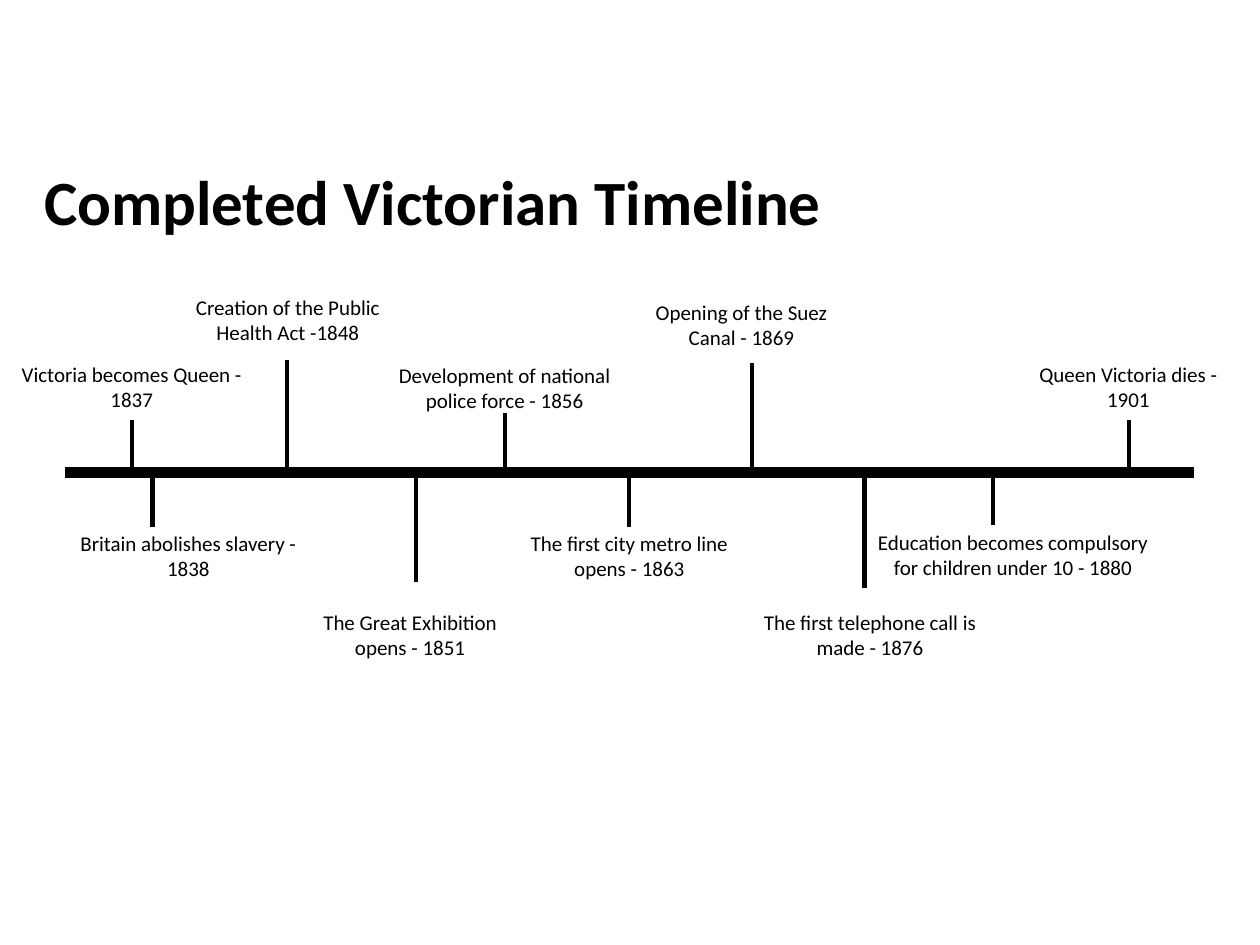
from pptx import Presentation
from pptx.dml.color import RGBColor
from pptx.enum.shapes import MSO_CONNECTOR as Connector
from pptx.enum.text import MSO_ANCHOR as Anchor, MSO_AUTO_SIZE as AutoSize, PP_ALIGN as Align
from pptx.oxml.ns import qn
from pptx.util import Pt
from lxml.etree import SubElement

SCALE = 9144
COLORS = {"ink": "000000", "paper": "FFFFFF"}
TITLE_FONT = {"name": "Calibri", "size": Pt(36), "bold": True}
LABEL_FONT = {"name": "Calibri", "size": Pt(12), "bold": False}
LABEL_WIDTH, LABEL_HEIGHT = 195, 50

# text, stem x, stem end, label left, label top, label width
EVENTS = [
    ("Victoria becomes Queen - 1837", 53, -42, -45, -93, LABEL_WIDTH),
    ("Britain abolishes slavery - 1838", 69, 43, 0, 41, LABEL_WIDTH),
    ("Creation of the Public Health Act -1848", 176, -89, 79, -146, LABEL_WIDTH),
    ("The Great Exhibition opens - 1851", 278, 87, 176, 104, LABEL_WIDTH),
    ("Development of national police force - 1856", 349, -47, 251, -92, LABEL_WIDTH),
    ("The first city metro line opens - 1863", 447, 43, 350, 41, LABEL_WIDTH),
    ("Opening of the Suez Canal - 1869", 545, -87, 439, -142, LABEL_WIDTH),
    ("The first telephone call is made - 1876", 634, 92, 541, 104, LABEL_WIDTH),
    ("Education becomes compulsory for children under 10 - 1880", 736, 42, 631, 40, 242),
    ("Queen Victoria dies - 1901", 844, -42, 746, -93, LABEL_WIDTH),
]


def px(*lengths):
    return [length * SCALE for length in lengths]


def color(name):
    return RGBColor.from_string(COLORS[name])


def write(box, text, font, align, anchor, auto_size):
    frame = box.text_frame
    settings = {"word_wrap": True, "vertical_anchor": anchor, "auto_size": auto_size}
    for name, value in settings.items():
        setattr(frame, name, value)
    para = frame.paragraphs[0]
    para.alignment = align
    span = para.add_run()
    span.text = text
    for name, value in font.items():
        setattr(span.font, name, value)
    span.font.color.rgb = color("ink")
    return para


def add_line(page, start, end, weight):
    line = page.shapes.add_connector(Connector.STRAIGHT, *px(*start, *end))
    line.line.color.rgb = color("ink")
    line.line.width = Pt(weight)
    SubElement(line._element.spPr, qn("a:effectLst"))


def add_title(page, left, top, width, height):
    title = page.shapes.title
    title.left, title.top, title.width, title.height = px(left, top, width, height)
    para = write(title, "Completed Victorian Timeline", TITLE_FONT,
                 Align.LEFT, Anchor.MIDDLE, AutoSize.NONE)
    para.line_spacing = 0.9


def add_timeline(page, left, axis, width):
    add_line(page, (left, axis), (left + width, axis), 6)
    for text, stem, reach, label_left, label_top, label_width in EVENTS:
        add_line(page, (left + stem, axis + reach), (left + stem, axis), 2.5)
        label = page.shapes.add_textbox(
            *px(left + label_left, axis + label_top, label_width, LABEL_HEIGHT))
        write(label, text, LABEL_FONT, Align.CENTER, Anchor.TOP, AutoSize.SHAPE_TO_FIT_TEXT)


def main():
    deck = Presentation()
    deck.slide_width, deck.slide_height = px(1000, 750)
    page = deck.slides.add_slide(deck.slide_layouts.get_by_name("Title Only"))
    page.background.fill.solid()
    page.background.fill.fore_color.rgb = color("paper")
    add_title(page, 25, 126, 792, 74)
    add_timeline(page, 52, 375, 896)
    deck.save("out.pptx")


if __name__ == "__main__":
    main()
